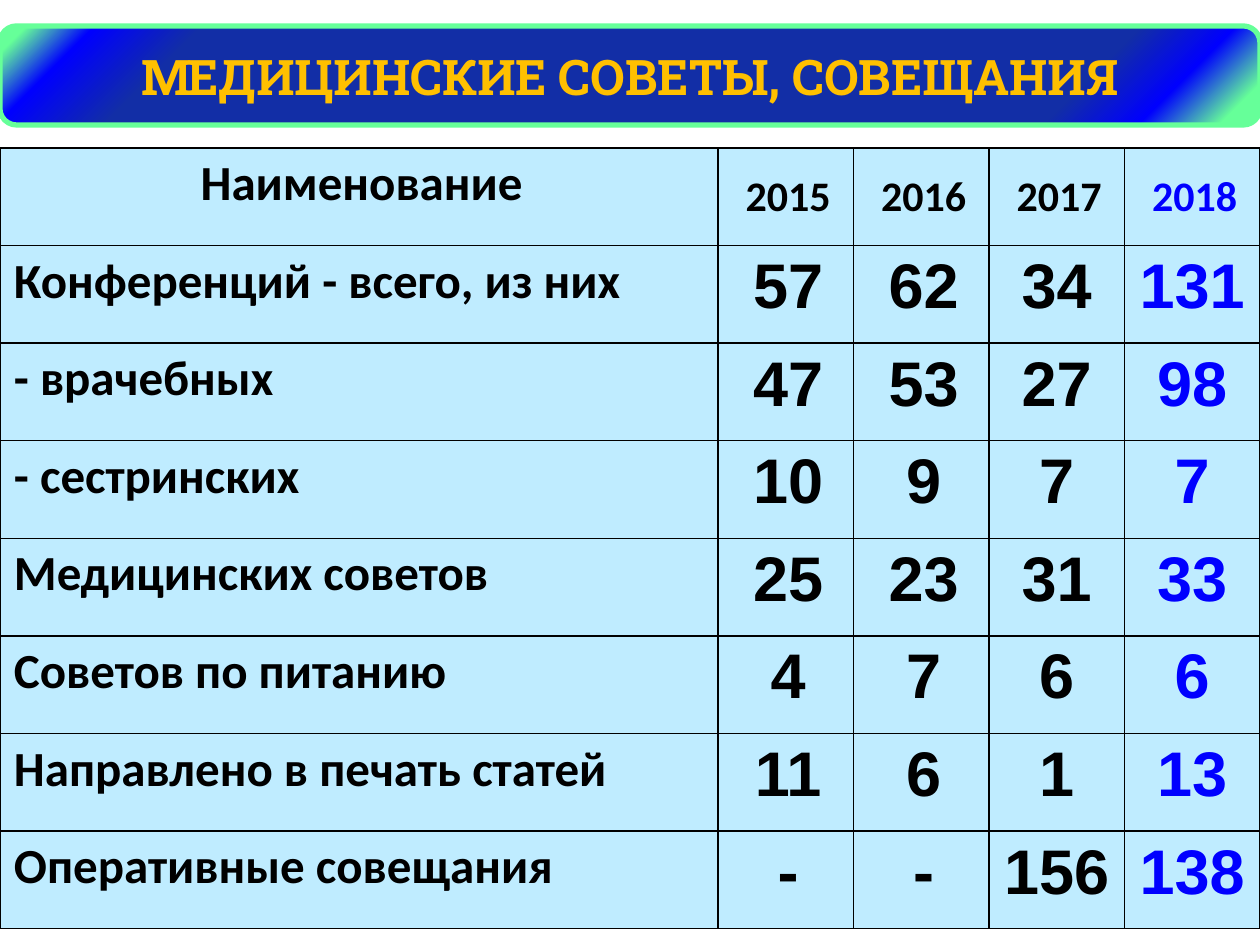
from lxml.etree import SubElement
from pptx import Presentation
from pptx.dml.color import RGBColor
from pptx.enum.shapes import MSO_SHAPE
from pptx.enum.text import MSO_ANCHOR, PP_ALIGN
from pptx.oxml import parse_xml
from pptx.oxml.ns import nsdecls, qn
from pptx.util import Pt

TITLE = "МЕДИЦИНСКИЕ СОВЕТЫ, СОВЕЩАНИЯ"
ROWS = [
    ("Наименование", "2015", "2016", "2017", "2018"),
    ("Конференций - всего, из них", "57", "62", "34", "131"),
    ("- врачебных", "47", "53", "27", "98"),
    ("- сестринских", "10", "9", "7", "7"),
    ("Медицинских советов", "25", "23", "31", "33"),
    ("Советов по питанию", "4", "7", "6", "6"),
    ("Направлено в печать статей", "11", "6", "1", "13"),
    ("Оперативные совещания", "-", "-", "156", "138"),
]
BANNER_STOPS = [(3, "66FF99"), (9, "0000FF"), (16, "122EA6"),
                (85, "122EA6"), (93, "0000FF"), (98, "66FF99")]

BLACK = RGBColor(0x00, 0x00, 0x00)
BLUE = RGBColor(0x00, 0x00, 0xFF)
PALE_BLUE = RGBColor(0xBF, 0xEC, 0xFF)
GOLD = RGBColor(0xFF, 0xC0, 0x00)
MINT = RGBColor(0x66, 0xFF, 0x99)

PAGE_WIDTH, PAGE_HEIGHT = 1260, 945
BANNER_TOP, BANNER_HEIGHT = 26, 99
TABLE_TOP, TABLE_HEIGHT = 148, 781
NAME_WIDTH = 718
INDENT = 5
SIDE_MARGIN, EDGE_MARGIN = 9, 6


def px(length):
    """Turn pixels into EMU."""
    return round(length * 914400 / 126)


def style_text(frame, font_name, size, color, align):
    """Format the only paragraph of a text frame."""
    paragraph = frame.paragraphs[0]
    paragraph.alignment = align
    font = paragraph.runs[0].font
    font.name, font.size, font.bold = font_name, Pt(size), True
    font.color.rgb = color


def draw_borders(cell):
    """Put a thin black line on every side of a cell, ahead of its fill."""
    properties = cell._tc.get_or_add_tcPr()
    for position, side in enumerate(("lnL", "lnR", "lnT", "lnB")):
        line = parse_xml(
            f'<a:{side} {nsdecls("a")} w="12700"><a:solidFill>'
            f'<a:srgbClr val="{BLACK}"/></a:solidFill></a:{side}>')
        properties.insert(position, line)


def add_banner(page):
    """Draw the rounded title banner with its radial gradient."""
    banner = page.shapes.add_shape(
        MSO_SHAPE.ROUNDED_RECTANGLE, 0, px(BANNER_TOP), px(PAGE_WIDTH), px(BANNER_HEIGHT))
    banner.shadow.inherit = False
    banner.line.color.rgb = MINT
    banner.line.width = Pt(3)
    banner.fill.gradient()
    gradient = banner._element.spPr.find(qn("a:gradFill"))
    for child in list(gradient):
        gradient.remove(child)
    stops = SubElement(gradient, qn("a:gsLst"))
    for percent, color in BANNER_STOPS:
        stop = SubElement(stops, qn("a:gs"), pos=str(percent * 1000))
        SubElement(stop, qn("a:srgbClr"), val=color)
    circle = SubElement(gradient, qn("a:path"), path="circle")
    SubElement(circle, qn("a:fillToRect"), l="100000", t="100000")
    banner.text_frame.text = TITLE
    banner.text_frame.vertical_anchor = MSO_ANCHOR.MIDDLE
    style_text(banner.text_frame, "Roboto Slab", 28, GOLD, PP_ALIGN.CENTER)


def fill_cell(cell, text, row, column):
    """Write and format one table cell by its place in the grid."""
    is_header, is_name = row == 0, column == 0
    cell.text = text
    cell.fill.solid()
    cell.fill.fore_color.rgb = PALE_BLUE
    cell.margin_left = cell.margin_right = px(SIDE_MARGIN)
    cell.margin_top = cell.margin_bottom = px(EDGE_MARGIN)
    is_year = is_header and not is_name
    cell.vertical_anchor = MSO_ANCHOR.MIDDLE if is_year else MSO_ANCHOR.TOP
    size = 28 if is_name else 24 if is_header else 36
    style_text(
        cell.text_frame,
        "Calibri" if is_header or is_name else "Arial",
        size,
        BLUE if column == len(ROWS[0]) - 1 else BLACK,
        PP_ALIGN.LEFT if is_name and not is_header else PP_ALIGN.CENTER)
    if is_header or column < 3:
        cell.text_frame.paragraphs[0]._p.get_or_add_pPr().set("marL", str(px(INDENT)))
    draw_borders(cell)


def add_counts_table(page):
    """Build the table of meetings by year."""
    year_count = len(ROWS[0]) - 1
    table = page.shapes.add_table(
        len(ROWS), year_count + 1, 0, px(TABLE_TOP), px(PAGE_WIDTH), px(TABLE_HEIGHT)).table
    table.horz_banding = False
    table.columns[0].width = px(NAME_WIDTH)
    for column in range(1, year_count + 1):
        table.columns[column].width = px((PAGE_WIDTH - NAME_WIDTH) / year_count)
    for row, values in enumerate(ROWS):
        table.rows[row].height = px(TABLE_HEIGHT / len(ROWS))
        for column, text in enumerate(values):
            fill_cell(table.cell(row, column), text, row, column)


def main():
    """Build the slide and save it."""
    deck = Presentation()
    deck.slide_width, deck.slide_height = px(PAGE_WIDTH), px(PAGE_HEIGHT)
    page = deck.slides.add_slide(deck.slide_layouts[6])
    add_counts_table(page)
    add_banner(page)
    deck.save("out.pptx")


if __name__ == "__main__":
    main()
